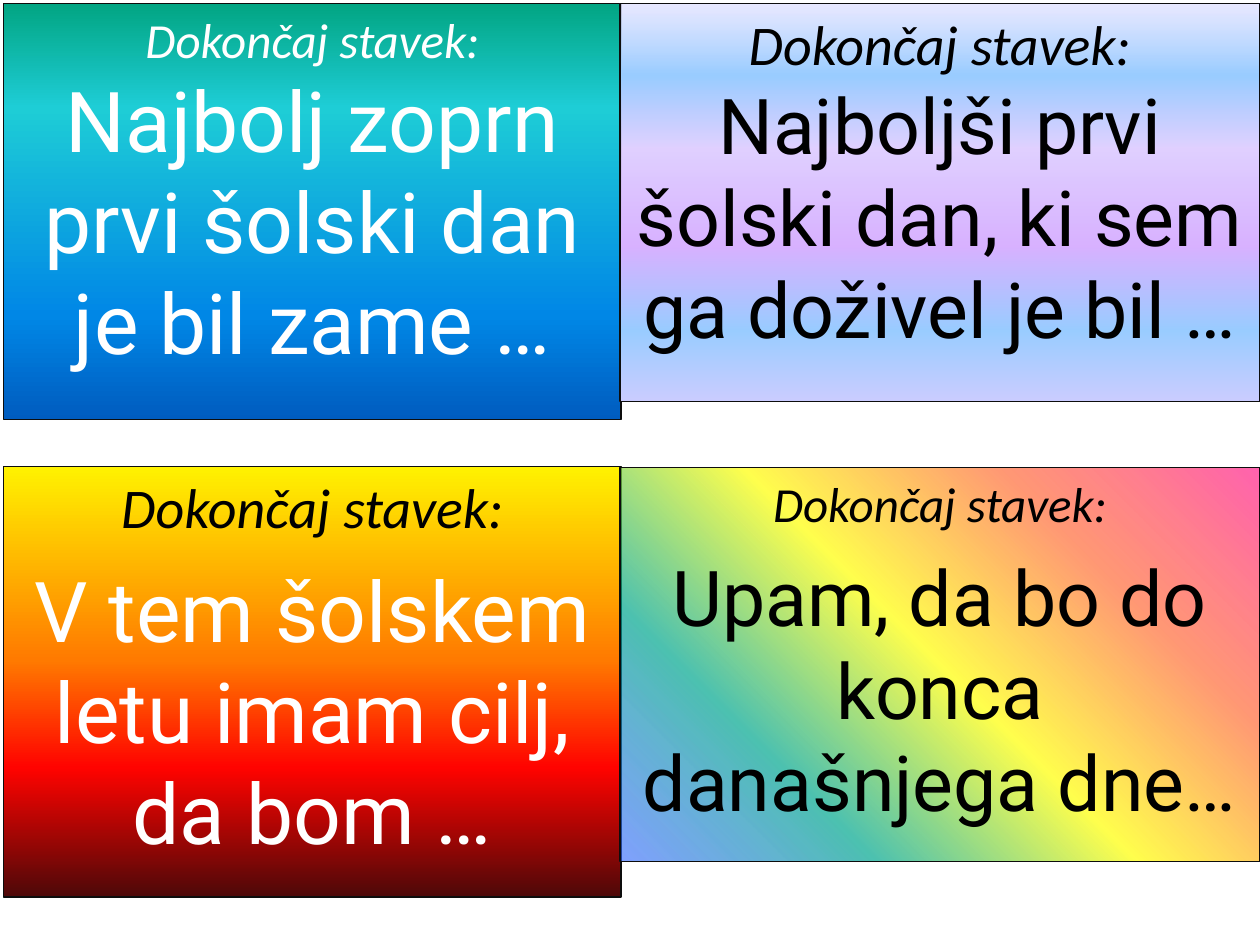
"""Build a slide of four gradient cards with unfinished sentences."""
from dataclasses import dataclass

from lxml.etree import SubElement
from pptx import Presentation
from pptx.dml.color import RGBColor
from pptx.enum.shapes import MSO_SHAPE
from pptx.enum.text import MSO_ANCHOR, MSO_AUTO_SIZE, PP_ALIGN
from pptx.oxml.ns import qn
from pptx.slide import Slide
from pptx.util import Inches, Pt

COLORS = {"white": "FFFFFF", "black": "000000", "outline": "0D0D0D"}
PROMPT = "Dokončaj stavek:"
LEFT, RIGHT = (0.03, 4.9), (4.92, 5.08)
GRADIENTS = {
    "ocean": [(0, "02A583", 100), (25, "1ECDD6", 100), (75, "0087E6", 100), (100, "005CBF", 100)],
    "lilac": [(0, "E4E4FF", 82), (18, "99CCFF", 100), (36, "DDCDFF", 92),
              (61, "D8B1FF", 100), (82, "99CCFF", 100), (100, "CCCCFF", 100)],
    "fire": [(0, "FFF200", 100), (45, "FF7A00", 100), (70, "FF0300", 100), (100, "4D0808", 100)],
    "rainbow": [(0, "FF3399", 77), (25, "FF6633", 67), (50, "FFFF00", 69),
                (75, "01A78F", 70), (100, "3366FF", 61)],
}


@dataclass(frozen=True)
class Card:
    """One card: its place, gradient and sentence."""

    column: tuple[float, float]
    top: float
    height: float
    gradient: str
    sentence: str
    prompt_size: int
    sentence_size: int
    prompt_color: str = "black"
    sentence_color: str = "black"
    gap: int = 0
    angle: int = 90


CARDS = [
    Card(LEFT, 0.03, 3.3, "ocean", "Najbolj zoprn prvi šolski dan je bil zame …",
         28, 48, "white", "white"),
    Card(RIGHT, 0.03, 3.16, "lilac", "Najboljši prvi šolski dan, ki sem ga doživel je bil …",
         32, 44),
    Card(LEFT, 3.7, 3.42, "fire", "V tem šolskem letu imam cilj, da bom …",
         32, 48, sentence_color="white", gap=11),
    Card(RIGHT, 3.71, 3.13, "rainbow", "Upam, da bo do konca današnjega dne…",
         28, 44, gap=10, angle=135),
]


def fill_gradient(shape, stops: list[tuple[int, str, int]], angle: int) -> None:
    """Fill a shape with stops of position, colour and opacity, turned clockwise."""
    shape.fill.gradient()
    shape.fill.gradient_angle = 360 - angle
    stop_list = shape.fill._xPr.find(qn("a:gradFill")).find(qn("a:gsLst"))
    for old_stop in list(stop_list):
        stop_list.remove(old_stop)
    for position, color, opacity in stops:
        stop = SubElement(stop_list, qn("a:gs"), pos=str(position * 1000))
        rgb = SubElement(stop, qn("a:srgbClr"), val=color)
        if opacity < 100:
            SubElement(rgb, qn("a:alpha"), val=str(opacity * 1000))


def write_line(paragraph, text: str, face: str, size: int, color: str, italic: bool) -> None:
    """Write one centred paragraph."""
    paragraph.text = text
    paragraph.alignment = PP_ALIGN.CENTER
    font = paragraph.font
    font.name, font.size, font.italic = face, Pt(size), italic
    font.color.rgb = RGBColor.from_string(COLORS[color])


def draw_card(slide: Slide, card: Card) -> None:
    """Draw a card with its prompt above its sentence."""
    left, width = card.column
    panel = slide.shapes.add_shape(
        MSO_SHAPE.RECTANGLE, Inches(left), Inches(card.top), Inches(width), Inches(card.height))
    panel.shadow.inherit = False
    fill_gradient(panel, GRADIENTS[card.gradient], card.angle)
    panel.line.color.rgb = RGBColor.from_string(COLORS["outline"])
    panel.line.width = Pt(0.75)
    frame = panel.text_frame
    frame.word_wrap = True
    frame.auto_size = MSO_AUTO_SIZE.SHAPE_TO_FIT_TEXT
    frame.vertical_anchor = MSO_ANCHOR.TOP
    write_line(frame.paragraphs[0], PROMPT, "Calibri", card.prompt_size, card.prompt_color, True)
    sentence = frame.add_paragraph()
    write_line(sentence, card.sentence, "Roboto", card.sentence_size, card.sentence_color, False)
    sentence.space_before = Pt(card.gap)


def main() -> None:
    """Build and save the presentation."""
    presentation = Presentation()
    presentation.slide_width, presentation.slide_height = Inches(10), Inches(7.5)
    slide = presentation.slides.add_slide(presentation.slide_layouts[6])
    for card in CARDS:
        draw_card(slide, card)
    presentation.save("out.pptx")


if __name__ == "__main__":
    main()
